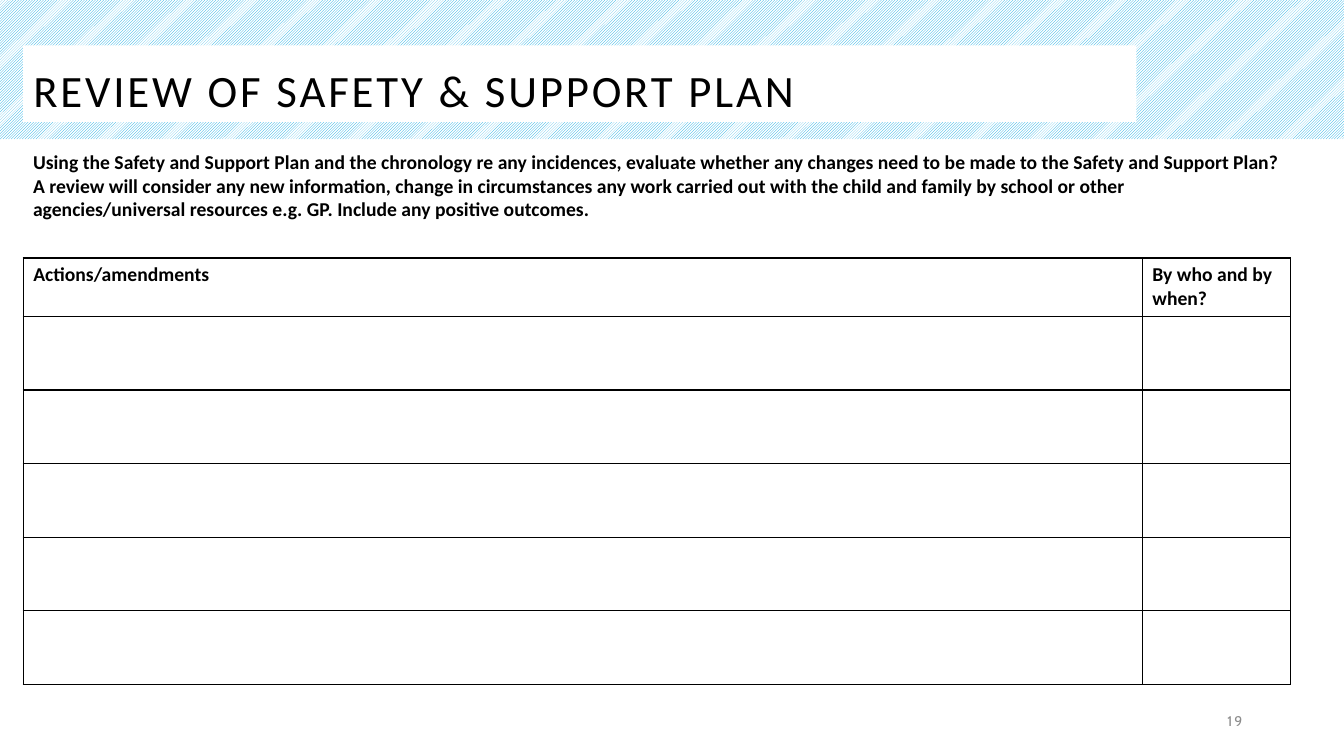
from dataclasses import dataclass

from lxml import etree
from pptx import Presentation
from pptx.dml.color import RGBColor
from pptx.enum.dml import MSO_PATTERN
from pptx.enum.shapes import MSO_SHAPE
from pptx.enum.text import MSO_ANCHOR, MSO_AUTO_SIZE, PP_ALIGN
from pptx.oxml.ns import qn
from pptx.slide import Slide
from pptx.table import _Cell
from pptx.text.text import TextFrame, _Run
from pptx.util import Pt

EMU_PER_PX = 9144  # 100 px to the inch
TITLE_ONLY = 5

BLACK = RGBColor(0x00, 0x00, 0x00)
WHITE = RGBColor(0xFF, 0xFF, 0xFF)
GREY = RGBColor(0x8C, 0x8C, 0x8C)
SKY = RGBColor(0x00, 0xA4, 0xE2)

DIAGONAL = MSO_PATTERN.LIGHT_UPWARD_DIAGONAL
RECTANGLE = MSO_SHAPE.RECTANGLE
TOP, MIDDLE, BOTTOM = MSO_ANCHOR.TOP, MSO_ANCHOR.MIDDLE, MSO_ANCHOR.BOTTOM
LEFT, RIGHT = PP_ALIGN.LEFT, PP_ALIGN.RIGHT
NO_AUTOFIT = MSO_AUTO_SIZE.NONE

SLIDE_WIDTH, SLIDE_HEIGHT = 1333, 750
MARGIN, CONTENT_WIDTH = 23, 1257
COLUMN_WIDTHS = (1110, 147)
ROW_HEIGHTS = (58,) + (73,) * 5
HEADINGS = ("Actions/amendments", "By who and by when?")
GUIDANCE = (
    "Using the Safety and Support Plan and the chronology re any incidences, "
    "evaluate whether any changes need to be made to the Safety and Support Plan? "
    "A review will consider any new information, change in circumstances any work "
    "carried out with the child and family by school or other "
    "agencies/universal resources e.g. GP. Include any positive outcomes."
)


@dataclass(frozen=True)
class TextStyle:
    size: int
    color: RGBColor = BLACK
    font: str = "Calibri"
    bold: bool = False
    spacing: int = 0  # hundredths of a point
    align: PP_ALIGN = LEFT
    anchor: MSO_ANCHOR = TOP


@dataclass(frozen=True)
class Box:
    left: int
    top: int
    width: int
    height: int

    def emu(self) -> tuple[int, int, int, int]:
        return px(self.left), px(self.top), px(self.width), px(self.height)


TITLE_STYLE = TextStyle(32, spacing=200, anchor=BOTTOM)
BODY_STYLE = TextStyle(14, bold=True)
NUMBER_STYLE = TextStyle(10, GREY, "Cabin", spacing=150, align=RIGHT, anchor=MIDDLE)


def px(length: int) -> int:
    return length * EMU_PER_PX


def format_run(run: _Run, style: TextStyle) -> None:
    run.font.name = style.font
    run.font.size = Pt(style.size)
    run.font.bold = style.bold
    run.font.color.rgb = style.color
    if style.spacing:
        run.font._element.set("spc", str(style.spacing))


def write(frame: TextFrame, text: str, style: TextStyle) -> None:
    frame.text = text
    frame.word_wrap = True
    frame.vertical_anchor = style.anchor
    for paragraph in frame.paragraphs:
        paragraph.alignment = style.align
        for run in paragraph.runs:
            format_run(run, style)


def add_text(slide: Slide, box: Box, text: str, style: TextStyle) -> None:
    write(slide.shapes.add_textbox(*box.emu()).text_frame, text, style)


def add_header(slide: Slide) -> None:
    """Draw the striped band and set the title on top of it."""
    band = slide.shapes.add_shape(RECTANGLE, *Box(0, 0, SLIDE_WIDTH, 138).emu())
    band.shadow.inherit = False
    band.line.fill.background()
    band.fill.patterned()
    band.fill.pattern = DIAGONAL
    band.fill.fore_color.rgb = SKY
    band.fill.back_color.rgb = WHITE

    title = slide.shapes.title
    band.element.addnext(title.element)
    title.left, title.top, title.width, title.height = Box(MARGIN, 45, 1104, 76).emu()
    title.fill.solid()
    title.fill.fore_color.rgb = WHITE
    write(title.text_frame, "REVIEW OF SAFETY & SUPPORT PLAN", TITLE_STYLE)
    title.text_frame.auto_size = NO_AUTOFIT
    title.text_frame.paragraphs[0].line_spacing = 0.9


def outline_cell(cell: _Cell) -> None:
    properties = cell._tc.get_or_add_tcPr()
    for position, side in enumerate(("lnL", "lnR", "lnT", "lnB")):
        line = etree.Element(qn(f"a:{side}"), w=str(Pt(1)))
        fill = etree.SubElement(line, qn("a:solidFill"))
        etree.SubElement(fill, qn("a:srgbClr"), val=str(BLACK))
        properties.insert(position, line)


def add_actions_table(slide: Slide) -> None:
    box = Box(MARGIN, 256, CONTENT_WIDTH, sum(ROW_HEIGHTS))
    table = slide.shapes.add_table(
        len(ROW_HEIGHTS), len(COLUMN_WIDTHS), *box.emu()
    ).table
    table.first_row = False
    table.horz_banding = False
    for column, width in zip(table.columns, COLUMN_WIDTHS):
        column.width = px(width)
    for row, height in zip(table.rows, ROW_HEIGHTS):
        row.height = px(height)
    for cell in table.iter_cells():
        cell.fill.background()
        outline_cell(cell)
    for cell, heading in zip(table.rows[0].cells, HEADINGS):
        write(cell.text_frame, heading, BODY_STYLE)


def main() -> None:
    presentation = Presentation()
    presentation.slide_width = px(SLIDE_WIDTH)
    presentation.slide_height = px(SLIDE_HEIGHT)
    slide = presentation.slides.add_slide(presentation.slide_layouts[TITLE_ONLY])
    add_header(slide)
    add_text(slide, Box(942, 695, 300, 40), "19", NUMBER_STYLE)
    add_actions_table(slide)
    add_text(slide, Box(MARGIN, 144, CONTENT_WIDTH, 81), GUIDANCE, BODY_STYLE)
    presentation.save("out.pptx")


if __name__ == "__main__":
    main()
